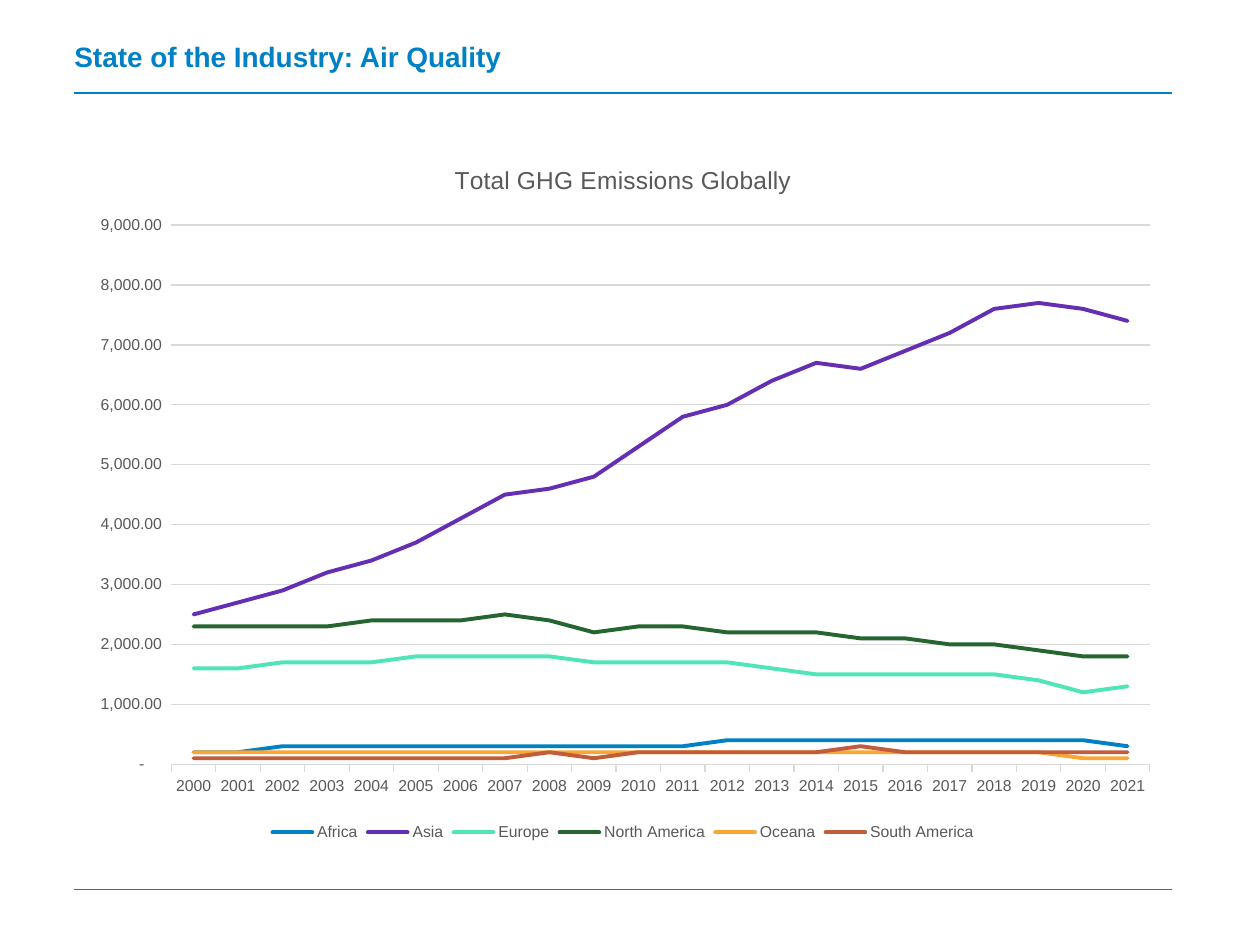
from pptx import Presentation
from pptx.chart.data import CategoryChartData
from pptx.dml.color import RGBColor
from pptx.enum.chart import XL_CHART_TYPE, XL_LEGEND_POSITION, XL_MARKER_STYLE, XL_TICK_MARK
from pptx.enum.shapes import MSO_CONNECTOR
from pptx.enum.text import MSO_ANCHOR, MSO_AUTO_SIZE, PP_ALIGN
from pptx.oxml.ns import qn
from pptx.util import Inches, Pt
from lxml import etree

LINE_CHART = XL_CHART_TYPE.LINE
LEGEND_BOTTOM = XL_LEGEND_POSITION.BOTTOM
NO_MARKER = XL_MARKER_STYLE.NONE
TICK_NONE, TICK_OUT = XL_TICK_MARK.NONE, XL_TICK_MARK.OUTSIDE

FONT = "Arial"
BLUE, GREY, PALE = "0081C6", "595959", "D9D9D9"
LEFT, RIGHT = 0.59, 9.3
RULES = [(0.74, 1.25), (7.06, 0.5)]  # height on the slide, line width

HEADING = "State of the Industry: Air Quality"
CHART_HEADING = "Total GHG Emissions Globally"
NUMBER_FORMAT = '_(* #,##0.00_);_(* \\(#,##0.00\\);_(* "-"??_);_(@_)'
YEARS = range(2000, 2022)
EMISSIONS = [
    ("Africa", BLUE,
     [200, 200, 300, 300, 300, 300, 300, 300, 300, 300, 300,
      300, 400, 400, 400, 400, 400, 400, 400, 400, 400, 300]),
    ("Asia", "642FB3",
     [2500, 2700, 2900, 3200, 3400, 3700, 4100, 4500, 4600, 4800, 5300,
      5800, 6000, 6400, 6700, 6600, 6900, 7200, 7600, 7700, 7600, 7400]),
    ("Europe", "50E5B8",
     [1600, 1600, 1700, 1700, 1700, 1800, 1800, 1800, 1800, 1700, 1700,
      1700, 1700, 1600, 1500, 1500, 1500, 1500, 1500, 1400, 1200, 1300]),
    ("North America", "256530",
     [2300, 2300, 2300, 2300, 2400, 2400, 2400, 2500, 2400, 2200, 2300,
      2300, 2200, 2200, 2200, 2100, 2100, 2000, 2000, 1900, 1800, 1800]),
    ("Oceana", "FAA634",
     [200, 200, 200, 200, 200, 200, 200, 200, 200, 200, 200,
      200, 200, 200, 200, 200, 200, 200, 200, 200, 100, 100]),
    ("South America", "C25D3C",
     [100, 100, 100, 100, 100, 100, 100, 100, 200, 100, 200,
      200, 200, 200, 200, 300, 200, 200, 200, 200, 200, 200]),
]


def rgb(color):
    return RGBColor.from_string(color)


def set_font(font, size, color, bold=False):
    font.name, font.size, font.bold = FONT, Pt(size), bold
    font.color.rgb = rgb(color)


def set_line(line, color, width):
    line.color.rgb = rgb(color)
    line.width = Pt(width)


def add_rule(slide, y, width):
    rule = slide.shapes.add_connector(
        MSO_CONNECTOR.STRAIGHT, Inches(LEFT), Inches(y), Inches(RIGHT), Inches(y))
    set_line(rule.line, BLUE, width)
    etree.SubElement(rule._element.spPr, qn("a:effectLst"))


def add_heading(slide):
    heading = slide.shapes.title
    heading.left, heading.top = Inches(LEFT), Inches(0.34)
    heading.width, heading.height = Inches(8.62), Inches(0.24)
    frame = heading.text_frame
    frame.margin_left = frame.margin_right = frame.margin_top = frame.margin_bottom = 0
    frame.vertical_anchor = MSO_ANCHOR.MIDDLE
    frame.word_wrap = True
    frame.auto_size = MSO_AUTO_SIZE.SHAPE_TO_FIT_TEXT
    paragraph = frame.paragraphs[0]
    paragraph.alignment = PP_ALIGN.LEFT
    paragraph.line_spacing = 0.9
    run = paragraph.add_run()
    run.text = HEADING
    set_font(run.font, 16, BLUE, bold=True)


def add_emissions_chart(slide):
    data = CategoryChartData(number_format=NUMBER_FORMAT)
    data.categories = [str(year) for year in YEARS]
    for region, _, values in EMISSIONS:
        data.add_series(region, values)
    chart = slide.shapes.add_chart(
        LINE_CHART, Inches(LEFT), Inches(1.1),
        Inches(RIGHT - LEFT), Inches(5.62), data).chart
    set_font(chart.font, 10, "000000")

    chart.has_title = True
    run = chart.chart_title.text_frame.paragraphs[0].add_run()
    run.text = CHART_HEADING
    set_font(run.font, 14, GREY)
    chart.chart_title.include_in_layout = False

    chart.has_legend = True
    chart.legend.position = LEGEND_BOTTOM
    chart.legend.include_in_layout = False
    set_font(chart.legend.font, 9, GREY)

    years, amounts = chart.category_axis, chart.value_axis
    for axis, tick in ((years, TICK_OUT), (amounts, TICK_NONE)):
        axis.major_tick_mark, axis.minor_tick_mark = tick, TICK_NONE
        set_font(axis.tick_labels.font, 9, GREY)
    set_line(years.format.line, PALE, 0.75)
    amounts.format.line.fill.background()
    amounts.minimum_scale, amounts.maximum_scale, amounts.major_unit = 0, 9000, 1000
    amounts.has_major_gridlines = True
    set_line(amounts.major_gridlines.format.line, PALE, 0.75)
    amounts.tick_labels.number_format = NUMBER_FORMAT
    amounts.tick_labels.number_format_is_linked = False

    plot = chart.plots[0]
    plot.vary_by_categories = False
    for series, (_, color, _) in zip(plot.series, EMISSIONS):
        series.smooth = False
        series.marker.style = NO_MARKER
        set_line(series.format.line, color, 2.25)
        series.format.line._get_or_add_ln().set("cap", "rnd")


def main():
    deck = Presentation()
    deck.slide_width, deck.slide_height = Inches(10), Inches(7.5)
    slide = deck.slides.add_slide(deck.slide_layouts.get_by_name("Title Only"))
    for y, width in RULES:
        add_rule(slide, y, width)
    add_heading(slide)
    add_emissions_chart(slide)
    deck.save("out.pptx")


if __name__ == "__main__":
    main()
